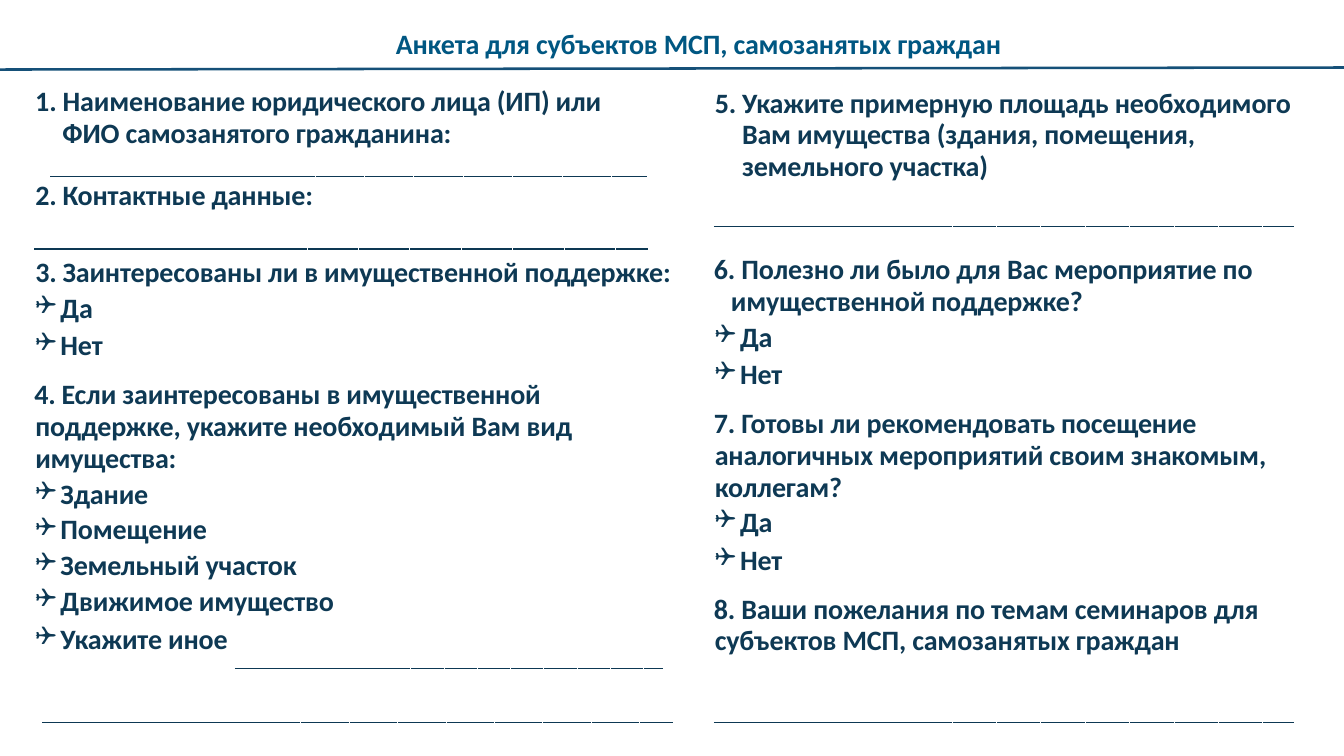
"""Build a one-slide questionnaire for small businesses and self-employed citizens."""
from dataclasses import dataclass

from lxml.etree import SubElement as Sub
from pptx import Presentation
from pptx.dml.color import RGBColor as RGB
from pptx.enum.shapes import MSO_CONNECTOR as CONN
from pptx.enum.text import MSO_ANCHOR as ANCHOR, MSO_AUTO_SIZE as AUTO, PP_ALIGN as ALIGN
from pptx.oxml.ns import qn
from pptx.util import Inches, Pt


@dataclass(frozen=True)
class Theme:
    font: str = "Calibri"
    box_font: str = "Wingdings"
    size: float = 20
    heading: str = "005782"
    text: str = "0E3954"
    header_rule: str = "155078"
    answer_rule: str = "0D3853"
    header_width: float = 1.8
    answer_width: float = 1.02


THEME = Theme()

STYLES = {
    "heading": dict(align=ALIGN.CENTER, color=THEME.heading),
    "question": dict(left=0.28, hang=0.27, line=22.8),
    "numbered": dict(left=0.28, hang=0.27, number=2),
    "numbered_next": dict(left=0.28, hang=0.27, line=24, before=31, number=2),
    "hanging": dict(left=0.17, hang=0.17, line=22.8),
    "flush": dict(left=0.01, hang=0.01, line=22.8, before=12),
    "option": dict(left=0.26, hang=0.25, line=21.6, before=4, box="❑"),
    "last_option": dict(left=0.26, hang=0.25, line=22.8, before=4, box="❑"),
}

YES_NO = [("option", "Да"), ("last_option", "Нет")]

BLOCKS = [
    ((0.8, 0.25, 12.25, 0.35), ANCHOR.TOP, [
        ("heading", "Анкета для субъектов МСП, самозанятых граждан")]),
    ((0.34, 0.84, 6, 0.66), ANCHOR.TOP, [
        ("question", "1. Наименование юридического лица (ИП) или ФИО самозанятого гражданина:")]),
    ((0.34, 1.75, 6.42, 5.01), ANCHOR.TOP, [
        ("numbered", "Контактные данные:"),
        ("numbered_next", "Заинтересованы ли в имущественной поддержке:"),
        *YES_NO,
        ("flush", "4. Если заинтересованы в имущественной поддержке, "
                  "укажите необходимый Вам вид имущества:"),
        ("option", "Здание"),
        ("option", "Помещение"),
        ("option", "Земельный участок"),
        ("option", "Движимое имущество"),
        ("last_option", "Укажите иное")]),
    ((7.08, 0.84, 5.83, 0.98), ANCHOR.MIDDLE, [
        ("question", "5. Укажите примерную площадь необходимого Вам имущества "
                     "(здания, помещения, земельного участка)")]),
    ((7.08, 2.5, 5.92, 4.14), ANCHOR.TOP, [
        ("hanging", "6. Полезно ли было для Вас мероприятие по имущественной поддержке?"),
        *YES_NO,
        ("flush", "7. Готовы ли рекомендовать посещение аналогичных мероприятий "
                  "своим знакомым, коллегам?"),
        *YES_NO,
        ("flush", "8. Ваши пожелания по темам семинаров для субъектов МСП, "
                  "самозанятых граждан")]),
]

HEADER_RULE = (0, 0.69, 13.33, 0.67)
GAP = 0.01
ANSWER_RULES = [
    (0.5, 3.12, 6.42, 1.75, 0.49),
    (0.34, 3.04, 6.43, 2.47, 0.51),
    (0.42, 2.98, 6.67, 7.17, 0.48),
    (2.33, 4.07, 6.58, 6.63, 0.33),
    (7.08, 9.44, 12.83, 7.17, 0.44),
    (7.08, 9.44, 12.83, 2.25, 0.44),
]


def style_line(shape, color, width):
    shape.line.color.rgb = RGB.from_string(color)
    shape.line.width = Pt(width)


def add_header_rule(slide):
    c = slide.shapes.add_connector(CONN.STRAIGHT, *map(Inches, HEADER_RULE))
    style_line(c, THEME.header_rule, THEME.header_width)
    Sub(c._element.spPr, qn("a:effectLst"))


def add_answer_rule(slide, left, first_end, right, y, step):
    fb = slide.shapes.build_freeform(Inches(left), Inches(y))
    fb.add_line_segments([(Inches(first_end), Inches(y))], close=False)
    x = first_end
    while x + GAP < right:
        fb.move_to(Inches(x + GAP), Inches(y))
        x = min(x + step, right)
        fb.add_line_segments([(Inches(x), Inches(y))], close=False)
    sp = fb.convert_to_shape()
    sp.fill.background()
    sp.shadow.inherit = False
    style_line(sp, THEME.answer_rule, THEME.answer_width)


def add_paragraph(p, text, align=ALIGN.LEFT, color=THEME.text, left=0, hang=0,
                  line=None, before=0, number=None, box=None):
    pPr = p._p.get_or_add_pPr()
    pPr.set("marL", str(Inches(left)))
    pPr.set("indent", str(-Inches(hang)))
    if box:
        Sub(pPr, qn("a:buSzPct"), val="95000")
        Sub(pPr, qn("a:buFont"), typeface=THEME.box_font)
        Sub(pPr, qn("a:buChar"), char=box)
    elif number:
        Sub(pPr, qn("a:buAutoNum"), type="arabicPeriod", startAt=str(number))
    else:
        Sub(pPr, qn("a:buNone"))
    p.alignment = align
    p.space_before = Pt(before)
    if line:
        p.line_spacing = Pt(line)
    r = p.add_run()
    r.text = text
    r.font.name, r.font.size, r.font.bold = THEME.font, Pt(THEME.size), True
    r.font.color.rgb = RGB.from_string(color)
    r._r.get_or_add_rPr().set("spc", "-13")


def add_block(slide, place, anchor, lines):
    tf = slide.shapes.add_textbox(*map(Inches, place)).text_frame
    tf.word_wrap = True
    tf.auto_size = AUTO.SHAPE_TO_FIT_TEXT
    tf.vertical_anchor = anchor
    tf.margin_left = tf.margin_right = tf.margin_bottom = 0
    tf.margin_top = Inches(0.01)
    for i, (style, text) in enumerate(lines):
        p = tf.add_paragraph() if i else tf.paragraphs[0]
        add_paragraph(p, text, **STYLES[style])


def main():
    prs = Presentation()
    prs.slide_width, prs.slide_height = Inches(13.33), Inches(7.5)
    s = prs.slides.add_slide(prs.slide_layouts[6])
    add_header_rule(s)
    for block in BLOCKS:
        add_block(s, *block)
    for rule in ANSWER_RULES:
        add_answer_rule(s, *rule)
    prs.save("out.pptx")


if __name__ == "__main__":
    main()
